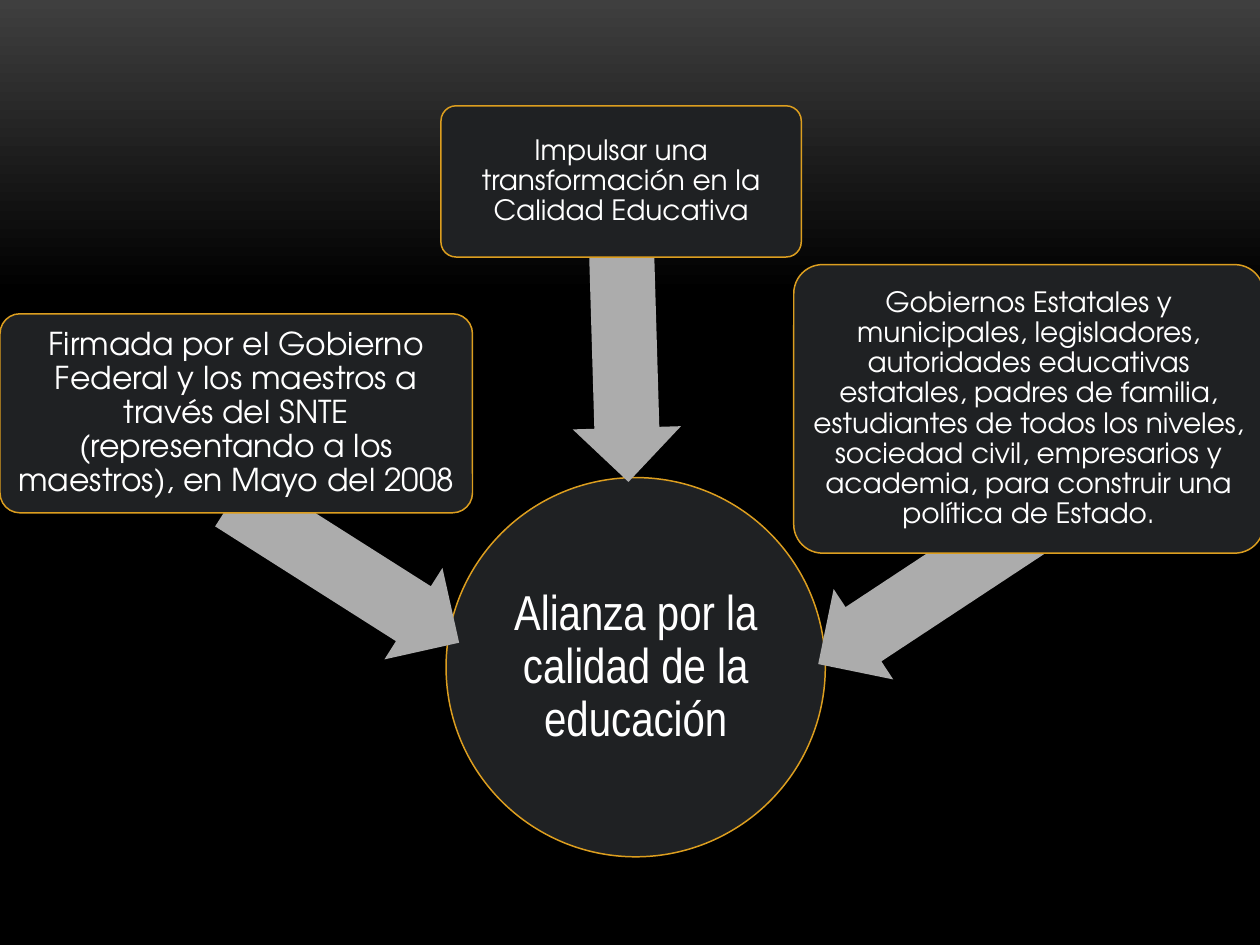
from pptx import Presentation
from pptx.dml.color import RGBColor
from pptx.enum.shapes import MSO_SHAPE
from pptx.enum.text import MSO_ANCHOR, PP_ALIGN
from pptx.util import Inches, Pt

BLACK = RGBColor(0x00, 0x00, 0x00)
CHARCOAL = RGBColor(0x3F, 0x3F, 0x3F)
PANEL = RGBColor(0x1F, 0x21, 0x23)
GOLD = RGBColor(0xDC, 0x9E, 0x1F)
GRAY = RGBColor(0xAC, 0xAC, 0xAC)
WHITE = RGBColor(0xFF, 0xFF, 0xFF)
BODY_FONT = "TeX Gyre Adventor"
CENTER_FONT = "Arial Narrow"


def write_text(shape, text, *, font=BODY_FONT, size=16, margin=0.03):
    frame = shape.text_frame
    frame.word_wrap = True
    frame.vertical_anchor = MSO_ANCHOR.MIDDLE
    frame.margin_left = frame.margin_right = Inches(margin)
    frame.margin_top = frame.margin_bottom = Inches(margin)
    paragraph = frame.paragraphs[0]
    paragraph.alignment = PP_ALIGN.CENTER
    paragraph.line_spacing = 0.9
    run = paragraph.add_run()
    run.text = text
    run.font.name = font
    run.font.size = Pt(size)
    run.font.color.rgb = WHITE


class DiagramSlide:
    def __init__(self, presentation):
        self.slide = presentation.slides.add_slide(presentation.slide_layouts[6])

    def background(self, top, bottom, fade_end):
        fill = self.slide.background.fill
        fill.gradient()
        fill.gradient_angle = 270
        for stop, color, position in zip(fill.gradient_stops, (top, bottom), (0, fade_end)):
            stop.color.rgb = color
            stop.position = position

    def shape(self, kind, box, color):
        shape = self.slide.shapes.add_shape(kind, *map(Inches, box))
        shape.shadow.inherit = False
        shape.fill.solid()
        shape.fill.fore_color.rgb = color
        shape.line.fill.background()
        return shape

    def panel(self, kind, box, text, **text_format):
        shape = self.shape(kind, box, PANEL)
        shape.line.color.rgb = GOLD
        shape.line.width = Pt(0.85)
        write_text(shape, text, **text_format)
        return shape

    def circle(self, box, text, **text_format):
        self.panel(MSO_SHAPE.OVAL, box, text, **text_format)

    def card(self, box, text, **text_format):
        shape = self.panel(MSO_SHAPE.ROUNDED_RECTANGLE, box, text, **text_format)
        shape.adjustments[0] = 0.1

    def arrow(self, box, rotation):
        shape = self.shape(MSO_SHAPE.LEFT_ARROW, box, GRAY)
        shape.adjustments[0] = 0.6
        shape.adjustments[1] = 0.5
        shape.rotation = rotation


def main():
    presentation = Presentation()
    presentation.slide_width = Inches(10)
    presentation.slide_height = Inches(7.5)

    diagram = DiagramSlide(presentation)
    diagram.background(CHARCOAL, BLACK, 0.31)
    diagram.circle(
        (3.54, 3.79, 3.01, 3.01),
        "Alianza por la calidad de la educación",
        font=CENTER_FONT, size=28, margin=0.02,
    )

    diagram.arrow((1.68, 4.1, 2.13, 0.86), 212.4)
    diagram.card(
        (0, 2.49, 3.75, 1.58),
        "Firmada por el Gobierno Federal y los maestros a través del SNTE "
        "(representando a los maestros), en Mayo del 2008",
        size=18, margin=0.04,
    )

    diagram.arrow((3.84, 2.28, 2.23, 0.86), 268.3)
    diagram.card(
        (3.5, 0.84, 2.86, 1.2),
        "Impulsar una transformación en la Calidad Educativa",
    )

    diagram.arrow((6.32, 4.26, 2.11, 0.86), 326.6)
    diagram.card(
        (6.3, 2.1, 3.73, 2.29),
        "Gobiernos Estatales y municipales, legisladores, autoridades educativas "
        "estatales, padres de familia, estudiantes de todos los niveles, sociedad "
        "civil, empresarios y academia, para construir una política de Estado.",
    )

    presentation.save("out.pptx")


if __name__ == "__main__":
    main()
